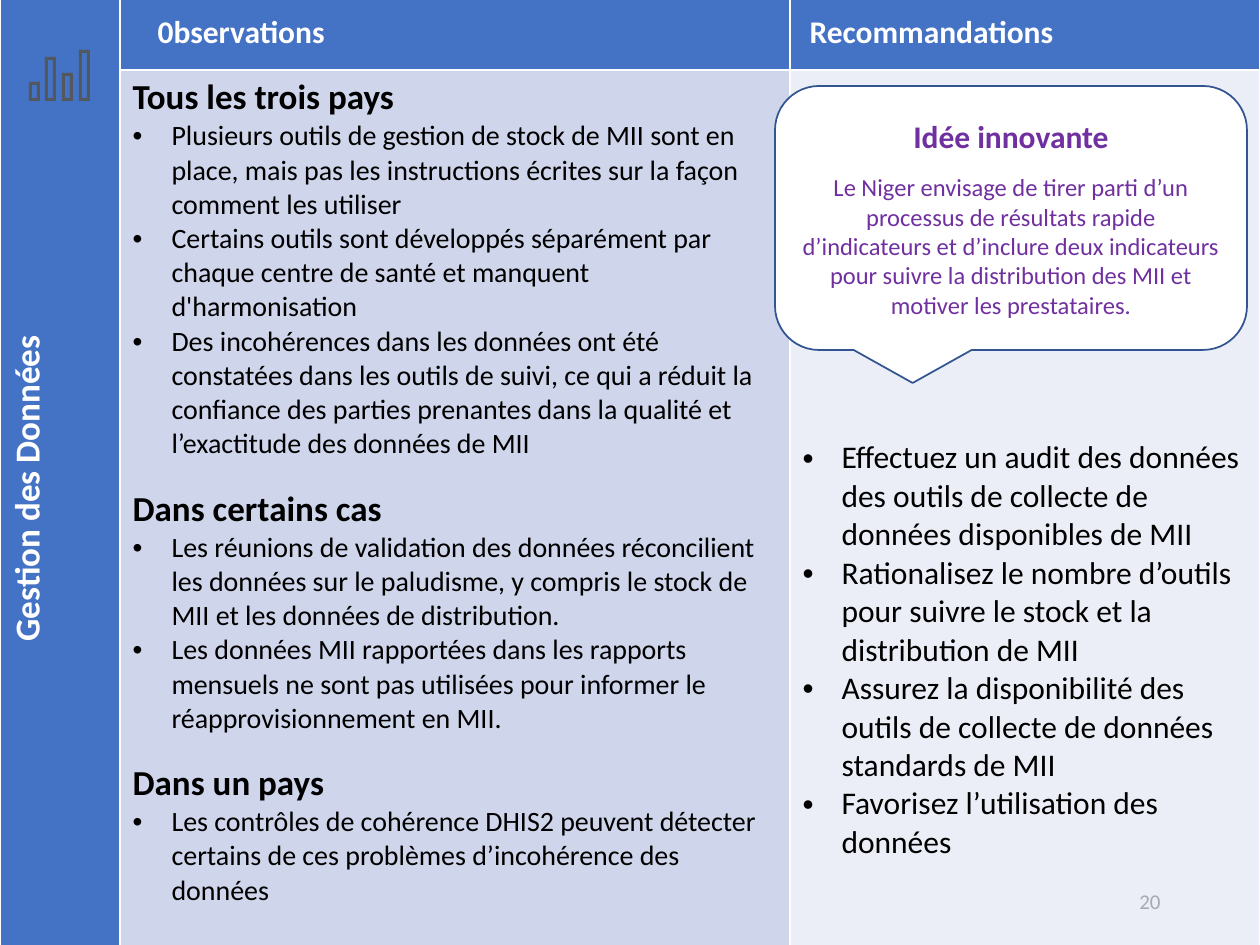
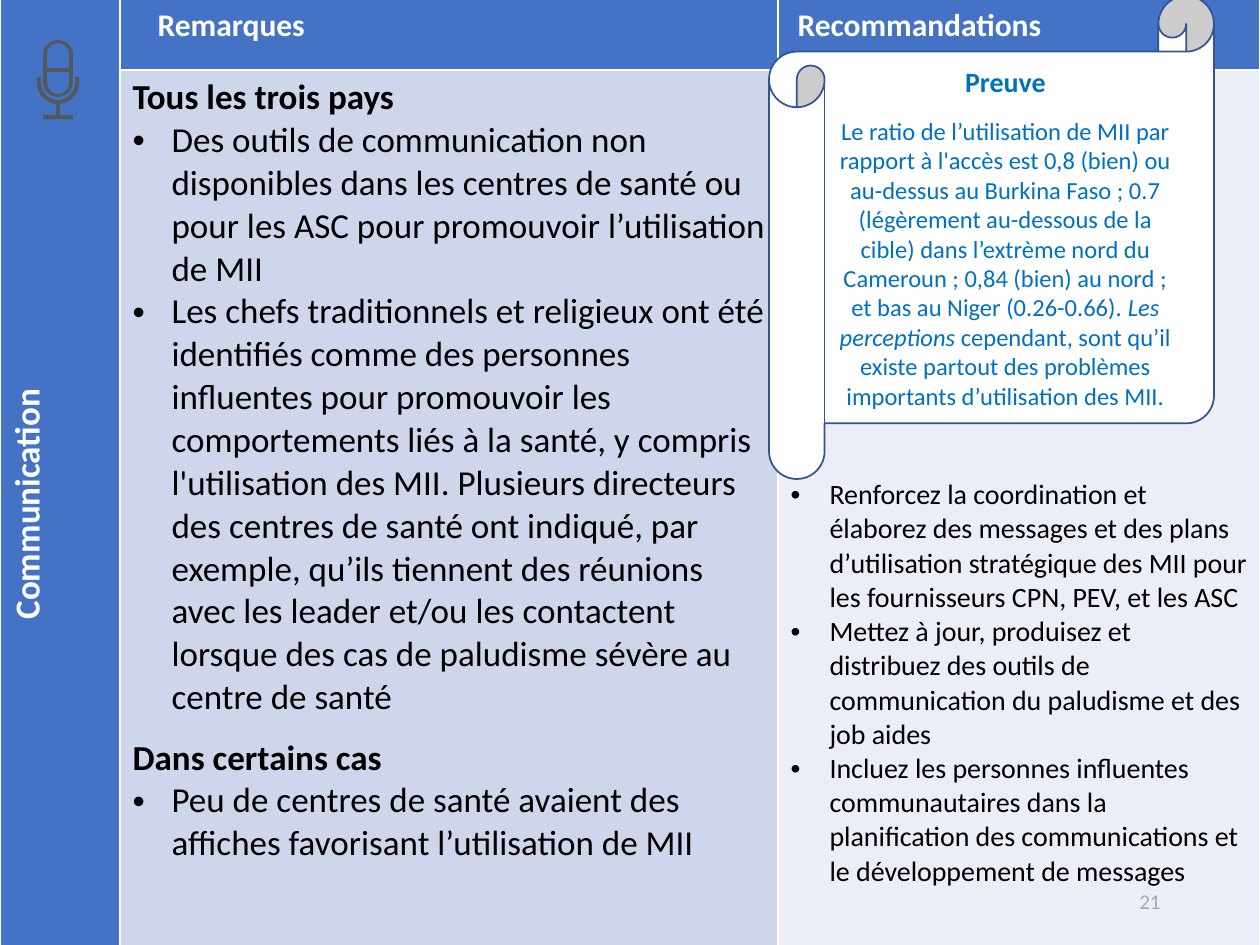
from dataclasses import dataclass
from math import cos, radians, sin

from lxml.etree import SubElement
from pptx import Presentation
from pptx.dml.color import RGBColor
from pptx.enum.shapes import MSO_SHAPE
from pptx.enum.text import MSO_ANCHOR, PP_ALIGN
from pptx.oxml import parse_xml
from pptx.oxml.ns import nsdecls, qn
from pptx.util import Emu, Pt

FONT = "Calibri"
WHITE = RGBColor(0xFF, 0xFF, 0xFF)
BLACK = RGBColor(0x00, 0x00, 0x00)
BLUE = RGBColor(0x44, 0x72, 0xC4)
PALE_BLUE = RGBColor(0xCF, 0xD5, 0xEA)
OUTLINE = RGBColor(0x32, 0x54, 0x91)
PURPLE = RGBColor(0x70, 0x30, 0xA0)
BRIGHT_BLUE = RGBColor(0x00, 0x70, 0xC0)
ICON_GRAY = RGBColor(0x53, 0x58, 0x5F)
NUMBER_GRAY = RGBColor(0x8C, 0x8C, 0x8C)

EMU_PER_PX = 914400 / 126
SLIDE_WIDTH, SLIDE_HEIGHT = 1260, 945
TOPIC_WIDTH = 120
BODY_HEIGHT = 876
BULLET_INDENT = 39
HEADING_SIZE = 20

Contour = list[tuple[float, float]]


@dataclass(frozen=True)
class Section:
    heading: str
    bullets: tuple[str, ...]


@dataclass(frozen=True)
class Span:
    text: str
    italic: bool = False


@dataclass(frozen=True)
class Callout:
    shape: MSO_SHAPE
    frame: tuple[int, int, int, int]
    color: RGBColor
    title: str
    title_size: int
    spans: tuple[Span, ...]


@dataclass(frozen=True)
class Topic:
    number: int
    name: str
    name_indent: int
    observations_title: str
    observations_width: int
    header_height: int
    sections: tuple[Section, ...]
    observation_size: int
    section_gap: int
    recommendations: tuple[str, ...]
    recommendation_size: int
    recommendations_top: int
    callout: Callout
    icon: list[Contour]


def px(length: float) -> Emu:
    return Emu(round(length * EMU_PER_PX))


def style(para, size: int, color: RGBColor, bold: bool = False) -> None:
    for run in para.runs:
        run.font.name = FONT
        run.font.size = Pt(size)
        run.font.bold = bold
        run.font.color.rgb = color


def indent(para, left: int, first_line: int = 0) -> None:
    properties = para._p.get_or_add_pPr()
    properties.set("marL", str(px(left)))
    properties.set("indent", str(px(first_line)))


def add_bullet(para) -> None:
    indent(para, BULLET_INDENT, -BULLET_INDENT)
    properties = para._p.get_or_add_pPr()
    SubElement(properties, qn("a:buFont")).set("typeface", "Arial")
    SubElement(properties, qn("a:buChar")).set("char", "•")


def next_para(frame):
    first = frame.paragraphs[0]
    return frame.add_paragraph() if first.text else first


def write_bullets(frame, bullets: tuple[str, ...], size: int) -> None:
    for bullet in bullets:
        para = next_para(frame)
        para.text = bullet
        add_bullet(para)
        style(para, size, BLACK)


def paint_cell(cell, color: RGBColor, opacity: int = 100) -> None:
    cell.fill.solid()
    cell.fill.fore_color.rgb = color
    properties = cell._tc.get_or_add_tcPr()
    if opacity < 100:
        color_element = properties.find(qn("a:solidFill"))[0]
        SubElement(color_element, qn("a:alpha")).set("val", str(opacity * 1000))
    for position, side in enumerate(("lnL", "lnR", "lnT", "lnB")):
        properties.insert(position, parse_xml(
            f'<a:{side} {nsdecls("a")} w="12700"><a:solidFill>'
            f'<a:srgbClr val="{WHITE}"/></a:solidFill></a:{side}>'))


def write_header(cell, text: str, size: int, left: int) -> None:
    cell.vertical_anchor = MSO_ANCHOR.MIDDLE
    para = cell.text_frame.paragraphs[0]
    para.text = text
    indent(para, left)
    style(para, size, WHITE, True)


def add_topic_table(page, topic: Topic) -> None:
    top = SLIDE_HEIGHT + 1 - BODY_HEIGHT - topic.header_height
    table = page.shapes.add_table(
        2, 3, 0, px(top), px(SLIDE_WIDTH), px(topic.header_height + BODY_HEIGHT)).table
    widths = (TOPIC_WIDTH, topic.observations_width,
              SLIDE_WIDTH - TOPIC_WIDTH - topic.observations_width)
    for column, width in zip(table.columns, widths):
        column.width = px(width)
    for row, height in zip(table.rows, (topic.header_height, BODY_HEIGHT)):
        row.height = px(height)

    for cell in (*table.rows[0].cells, table.cell(1, 0)):
        paint_cell(cell, BLUE)
    name_cell, observations_header, recommendations_header = table.rows[0].cells
    name_cell.merge(table.cell(1, 0))
    name_cell._tc.get_or_add_tcPr().set("vert", "vert270")
    write_header(name_cell, topic.name, 20, topic.name_indent)
    write_header(observations_header, topic.observations_title, 18, 25)
    write_header(recommendations_header, "Recommandations", 18, 7)

    observations, recommendations = table.cell(1, 1), table.cell(1, 2)
    paint_cell(observations, PALE_BLUE)
    for position, section in enumerate(topic.sections):
        para = next_para(observations.text_frame)
        para.text = section.heading
        style(para, HEADING_SIZE, BLACK, True)
        if position:
            para.space_before = Pt(topic.section_gap)
        write_bullets(observations.text_frame, section.bullets, topic.observation_size)

    paint_cell(recommendations, PALE_BLUE, 40)
    recommendations.margin_top = px(topic.recommendations_top)
    write_bullets(recommendations.text_frame, topic.recommendations, topic.recommendation_size)


def add_callout(page, callout: Callout) -> None:
    shape = page.shapes.add_shape(callout.shape, *map(px, callout.frame))
    shape.shadow.inherit = False
    shape.fill.solid()
    shape.fill.fore_color.rgb = WHITE
    shape.line.color.rgb = OUTLINE
    shape.line.width = Pt(1)
    frame = shape.text_frame
    frame.word_wrap = True
    frame.vertical_anchor = MSO_ANCHOR.MIDDLE
    title = frame.paragraphs[0]
    title.text = callout.title
    title.alignment = PP_ALIGN.CENTER
    style(title, callout.title_size, callout.color, True)
    body = frame.add_paragraph()
    body.alignment = PP_ALIGN.CENTER
    body.space_before = Pt(10)
    for span in callout.spans:
        run = body.add_run()
        run.text = span.text
        run.font.italic = span.italic
    style(body, 14, callout.color)


def add_icon(page, contours: list[Contour]) -> None:
    scaled = [[(px(x), px(y)) for x, y in contour] for contour in contours]
    builder = page.shapes.build_freeform(*scaled[0][0], scale=1.0)
    for position, contour in enumerate(scaled):
        if position:
            builder.move_to(*contour[0])
        builder.add_line_segments(contour[1:], close=True)
    icon = builder.convert_to_shape()
    icon.shadow.inherit = False
    icon.fill.solid()
    icon.fill.fore_color.rgb = ICON_GRAY
    icon.line.fill.background()


def add_page_number(page, number: int) -> None:
    box = page.shapes.add_textbox(px(890), px(876), px(283), px(50))
    frame = box.text_frame
    frame.word_wrap = True
    frame.vertical_anchor = MSO_ANCHOR.MIDDLE
    frame.text = str(number)
    frame.paragraphs[0].alignment = PP_ALIGN.RIGHT
    style(frame.paragraphs[0], 12, NUMBER_GRAY)


def rectangle(left: int, top: int, right: int, bottom: int) -> Contour:
    return [(left, top), (right, top), (right, bottom), (left, bottom)]


def arc(center_y: int, radius: int, start: int, end: int) -> Contour:
    angles = [radians(start + (end - start) * step / 12) for step in range(13)]
    return [(58 + radius * cos(angle), center_y + radius * sin(angle)) for angle in angles]


def bar_chart_icon() -> list[Contour]:
    contours = []
    for position, top in enumerate((82, 57, 73, 50)):
        left = 29 + position * 50 // 3
        contours.append(rectangle(left, top, left + 11, 101))
        contours.append(rectangle(left + 3, top + 3, left + 8, 98))
    return contours


def microphone_icon() -> list[Contour]:
    capsule = arc(55, 15, 180, 360) + arc(82, 15, 0, 180)
    upper_hole = arc(54, 11, 180, 360) + [(69, 68), (47, 68)]
    lower_hole = [(47, 72), (69, 72)] + arc(83, 11, 0, 180)
    foot = [(56, 115), (43, 115), (43, 119), (73, 119), (73, 115), (60, 115)]
    stand = ([(37, 77)] + arc(83, 21, 180, 95) + foot + arc(83, 21, 85, 0)
             + [(79, 77), (75, 77)] + arc(83, 17, 0, 180) + [(41, 77)])
    return [capsule, upper_hole, lower_hole, stand]


TOPICS = (
    Topic(
        20, "Gestion des Données", 292, "0bservations", 670, 74,
        (
            Section("Tous les trois pays", (
                "Plusieurs outils de gestion de stock de MII sont en place, mais pas les instructions écrites sur la façon comment les utiliser",
                "Certains outils sont développés séparément par chaque centre de santé et manquent d'harmonisation",
                "Des incohérences dans les données ont été constatées dans les outils de suivi, ce qui a réduit la confiance des parties prenantes dans la qualité et l’exactitude des données de MII")),
            Section("Dans certains cas", (
                "Les réunions de validation des données réconcilient les données sur le paludisme, y compris le stock de MII et les données de distribution.",
                "Les données MII rapportées dans les rapports mensuels ne sont pas utilisées pour informer le réapprovisionnement en MII.")),
            Section("Dans un pays", (
                "Les contrôles de cohérence DHIS2 peuvent détecter certains de ces problèmes d’incohérence des données",)),
        ), 16, 15,
        (
            "Effectuez un audit des données des outils de collecte de données disponibles de MII",
            "Rationalisez le nombre d’outils pour suivre le stock et la distribution de MII",
            "Assurez la disponibilité des outils de collecte de données standards de MII",
            "Favorisez l’utilisation des données",
        ), 18, 369,
        Callout(MSO_SHAPE.ROUNDED_RECTANGULAR_CALLOUT, (775, 86, 472, 264), PURPLE, "Idée innovante", 18, (
            Span("Le Niger envisage de tirer parti d’un processus de résultats rapide d’indicateurs et d’inclure deux indicateurs pour suivre la distribution des MII et motiver les prestataires."),)),
        bar_chart_icon()),
    Topic(
        21, "Communication", 314, "Remarques", 658, 89,
        (
            Section("Tous les trois pays", (
                "Des outils de communication non disponibles dans les centres de santé ou pour les ASC pour promouvoir l’utilisation de MII",
                "Les chefs traditionnels et religieux ont été identifiés comme des personnes influentes pour promouvoir les comportements liés à la santé, y compris l'utilisation des MII. Plusieurs directeurs des centres de santé ont indiqué, par exemple, qu’ils tiennent des réunions avec les leader et/ou les contactent lorsque des cas de paludisme sévère au centre de santé")),
            Section("Dans certains cas", (
                "Peu de centres de santé avaient des affiches favorisant l’utilisation de MII",)),
        ), 20, 10,
        (
            "Renforcez la coordination et élaborez des messages et des plans d’utilisation stratégique des MII pour les fournisseurs CPN, PEV, et les ASC",
            "Mettez à jour, produisez et distribuez des outils de communication du paludisme et des job aides",
            "Incluez les personnes influentes communautaires dans la planification des communications et le développement de messages",
        ), 16, 408,
        Callout(MSO_SHAPE.HORIZONTAL_SCROLL, (769, -4, 445, 483), BRIGHT_BLUE, "Preuve", 16, (
            Span("Le ratio de l’utilisation de MII par rapport à l'accès est 0,8 (bien) ou au-dessus au Burkina Faso ; 0.7 (légèrement au-dessous de la cible) dans l’extrème nord du Cameroun ; 0,84 (bien) au nord ; et bas au Niger (0.26-0.66)."),
            Span(" Les perceptions", True),
            Span(" cependant, sont qu’il existe partout des problèmes importants d’utilisation des MII."))),
        microphone_icon()),
)


def main() -> None:
    deck = Presentation()
    deck.slide_width, deck.slide_height = px(SLIDE_WIDTH), px(SLIDE_HEIGHT)
    for topic in TOPICS:
        page = deck.slides.add_slide(deck.slide_layouts[6])
        add_page_number(page, topic.number)
        add_topic_table(page, topic)
        add_callout(page, topic.callout)
        add_icon(page, topic.icon)
    deck.save("out.pptx")


if __name__ == "__main__":
    main()
